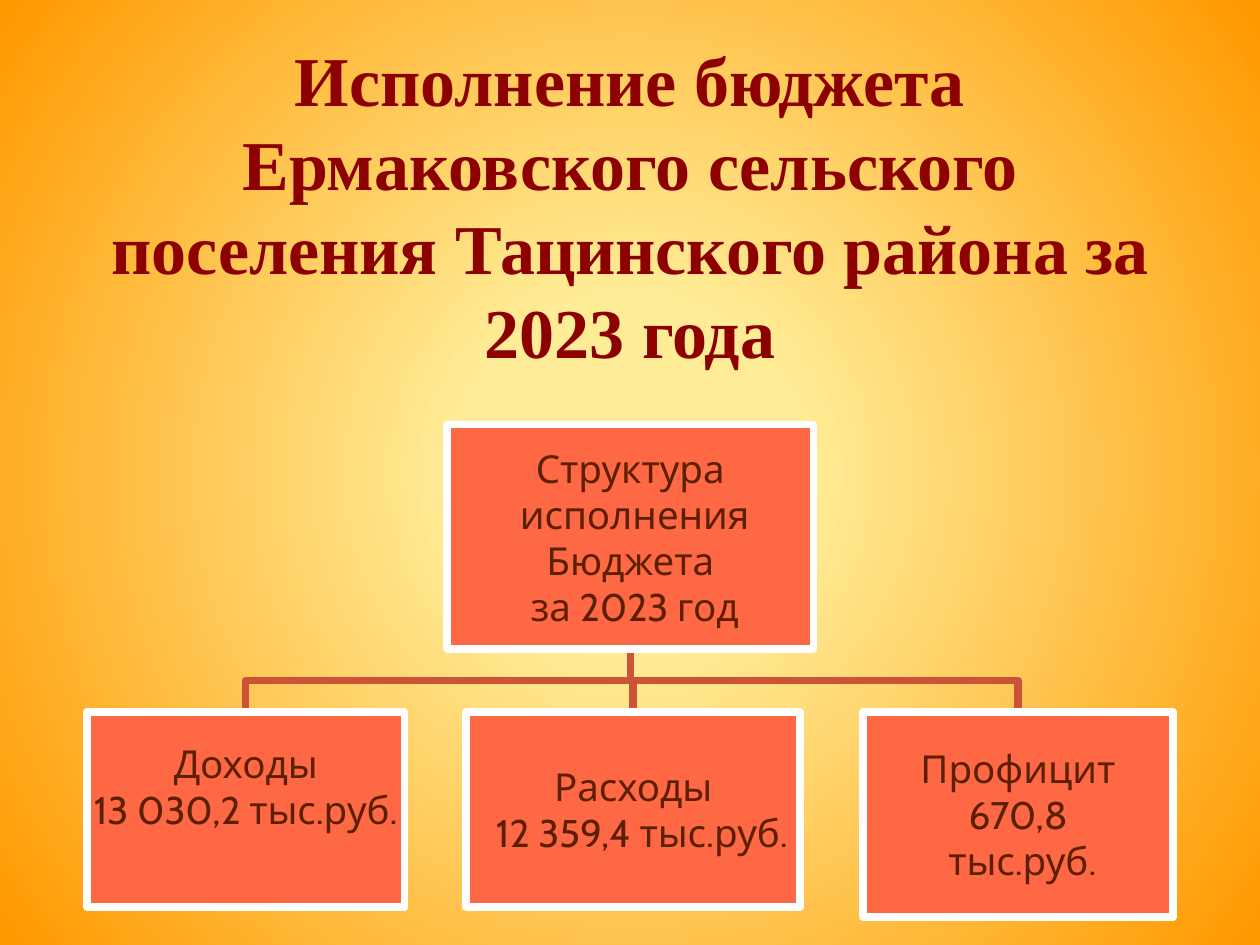
"""Build a slide with a budget tree of one root and three leaves."""
from dataclasses import dataclass

import lxml.etree
import pptx
import pptx.dml.color
import pptx.enum.shapes
import pptx.enum.text
import pptx.oxml
import pptx.util

Pt = pptx.util.Pt
ALIGN = pptx.enum.text.PP_ALIGN.CENTER
MID = pptx.enum.text.MSO_ANCHOR.MIDDLE
EDGE = 1.6
STEP = 26.3


@dataclass
class Row:
    text: str
    shift: float = 0


@dataclass
class Box:
    left: float
    top: float
    width: float
    height: float
    rows: list[Row]
    pad: float = EDGE

    @property
    def mid(self) -> float:
        return self.left + self.width / 2

    @property
    def base(self) -> float:
        return self.top + self.height


ROOT = Box(255.6, 242.6, 209.2, 128.2, [
    Row("Структура"), Row("исполнения", 5), Row("Бюджета"), Row("за 2023 год", 5)])
LEAVES = [
    Box(49.7, 406.8, 181.4, 111.6,
        [Row("Доходы"), Row("13 030,2 тыс.руб.")], EDGE + STEP),
    Box(266.4, 406.8, 190.8, 111.6,
        [Row("Расходы"), Row("12 359,4 тыс.руб.", 10)]),
    Box(493.2, 406.8, 177.1, 117.4,
        [Row("Профицит"), Row("670,8"), Row("тыс.руб.", 5)]),
]


def color(code: str) -> pptx.dml.color.RGBColor:
    return pptx.dml.color.RGBColor.from_string(code)


def apply(item, style: dict) -> None:
    for key, val in style.items():
        setattr(item, key, val)


def write(para, text: str, step: float, tint: str, style: dict) -> None:
    run = para.add_run()
    run.text = text
    apply(para, {"alignment": ALIGN, "line_spacing": Pt(step),
                 "space_before": Pt(0), "space_after": Pt(0)})
    apply(run.font, style)
    run.font.color.rgb = color(tint)


def outline(shape, tint: str) -> None:
    shape.shadow.inherit = False
    shape.line.color.rgb = color(tint)
    shape.line.width = Pt(4.33)


def link(slide, start: Box, end: Box) -> None:
    mid = (start.base + end.top) / 2
    pen = slide.shapes.build_freeform(Pt(start.mid), Pt(start.base))
    pen.add_line_segments(
        [(Pt(start.mid), Pt(mid)), (Pt(end.mid), Pt(mid)), (Pt(end.mid), Pt(end.top))],
        close=False)
    shape = pen.convert_to_shape()
    shape.fill.background()
    outline(shape, "CC5337")


def draw(slide, box: Box) -> None:
    shape = slide.shapes.add_shape(
        pptx.enum.shapes.MSO_SHAPE.RECTANGLE,
        Pt(box.left), Pt(box.top), Pt(box.width), Pt(box.height))
    shape.fill.solid()
    shape.fill.fore_color.rgb = color("FF6845")
    outline(shape, "FFFFFF")
    frame = shape.text_frame
    apply(frame, {"word_wrap": True, "vertical_anchor": MID,
                  "margin_left": Pt(EDGE), "margin_right": Pt(EDGE),
                  "margin_top": Pt(EDGE), "margin_bottom": Pt(box.pad)})
    for num, row in enumerate(box.rows):
        para = frame.add_paragraph() if num else frame.paragraphs[0]
        write(para, row.text, STEP, "5C1F00", {"name": "Cabin", "size": Pt(22)})
        if row.shift:
            para._p.get_or_add_pPr().set("marL", str(Pt(row.shift)))


def paint(slide) -> None:
    fill = slide.background.fill
    fill.gradient()
    for stop, (spot, tint) in zip(fill.gradient_stops, [(0.22, "FFEC97"), (0.99, "FF9900")]):
        stop.position = spot
        stop.color.rgb = color(tint)
    space = pptx.oxml.ns.nsdecls("a")
    glow = pptx.oxml.parse_xml(
        f'<a:path {space} path="circle">'
        '<a:fillToRect l="50000" t="50000" r="50000" b="50000"/></a:path>')
    line = slide.background._cSld.find(".//" + pptx.oxml.ns.qn("a:lin"))
    line.getparent().replace(line, glow)


def head(slide) -> None:
    title = slide.shapes.title
    apply(title, {"left": Pt(36), "top": Pt(21), "width": Pt(648), "height": Pt(192)})
    frame = title.text_frame
    apply(frame, {"word_wrap": True, "vertical_anchor": MID,
                  "auto_size": pptx.enum.text.MSO_AUTO_SIZE.NONE})
    write(frame.paragraphs[0],
          "Исполнение бюджета Ермаковского сельского поселения Тацинского района за 2023 года",
          48, "8C0000", {"name": "Times New Roman", "size": Pt(40), "bold": True})


def main() -> None:
    deck = pptx.Presentation()
    apply(deck, {"slide_width": Pt(720), "slide_height": Pt(540)})
    slide = deck.slides.add_slide(deck.slide_layouts[5])
    paint(slide)
    head(slide)
    for leaf in reversed(LEAVES):
        link(slide, ROOT, leaf)
    for box in [ROOT, *LEAVES]:
        draw(slide, box)
    deck.save("out.pptx")


if __name__ == "__main__":
    main()
